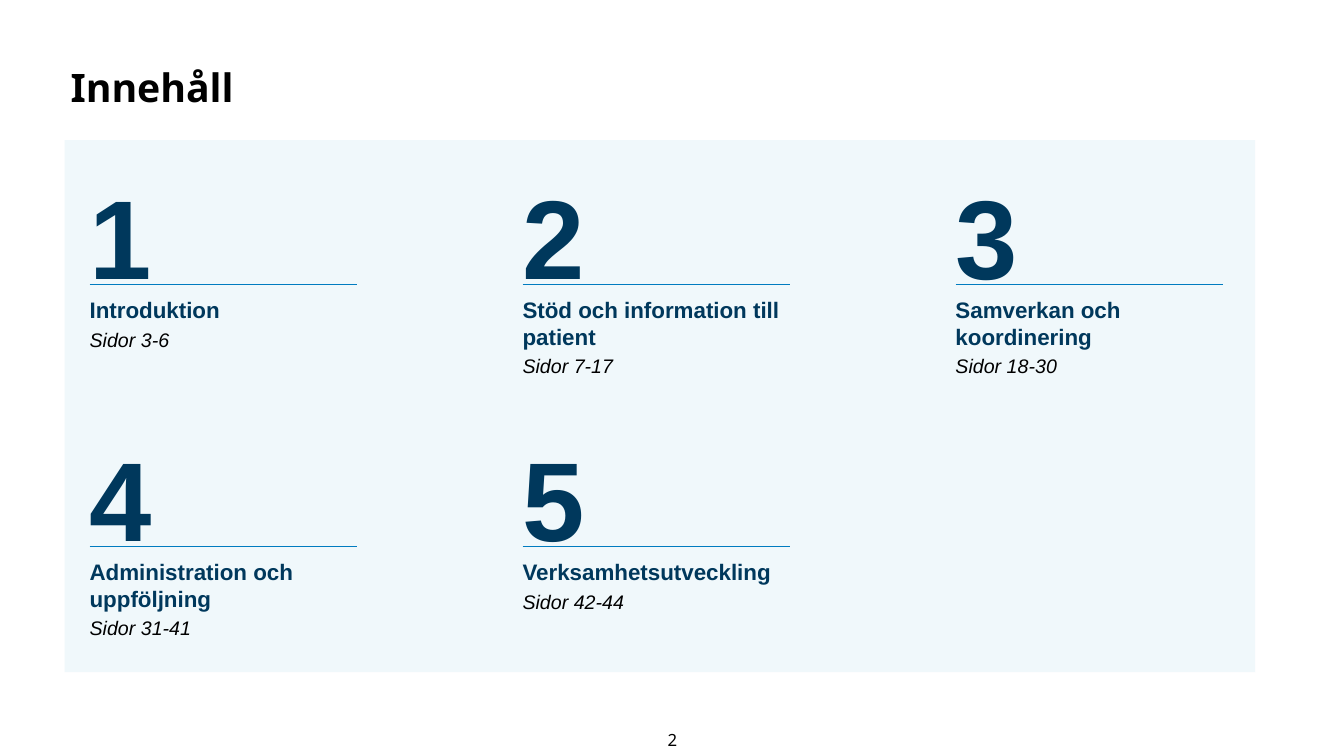
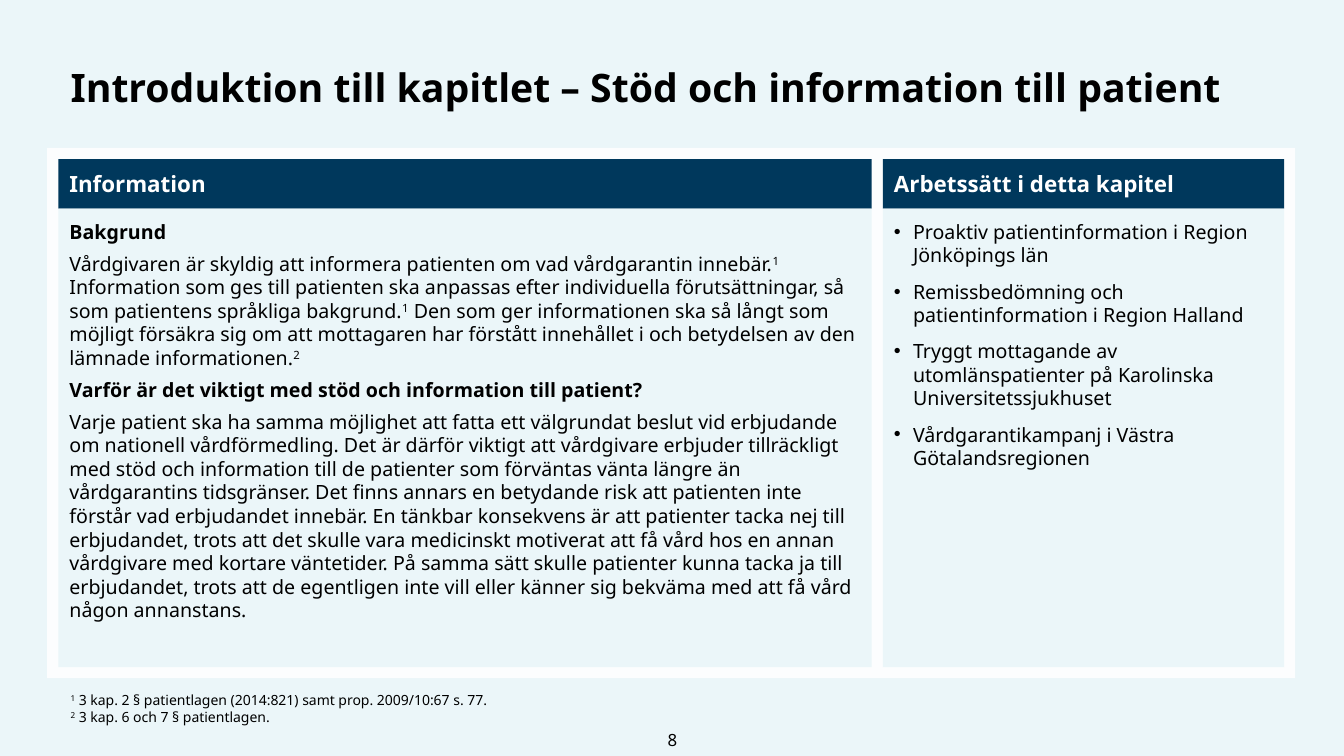
from lxml.etree import SubElement as Sub
from pptx import Presentation
from pptx.dml.color import RGBColor as Rgb
from pptx.enum.shapes import MSO_CONNECTOR as Link, MSO_SHAPE as Form
from pptx.enum.text import MSO_ANCHOR as Anchor, PP_ALIGN as Align
from pptx.oxml.ns import qn
from pptx.util import Cm, Pt

# Content
TOC = {
    "title": "Innehåll",
    "page": 2,
    "parts": [
        ("Introduktion", "Sidor 3-6"),
        ("Stöd och information till patient", "Sidor 7-17"),
        ("Samverkan och koordinering", "Sidor 18-30"),
        ("Administration och uppföljning", "Sidor 31-41"),
        ("Verksamhetsutveckling", "Sidor 42-44"),
    ],
}
# Each paragraph is (style, text); marks between ^ are raised
INTRO = {
    "title": "Introduktion till kapitlet – Stöd och information till patient",
    "page": 8,
    "cards": [
        ("Information", [
            ("strong", "Bakgrund"),
            ("body", "Vårdgivaren är skyldig att informera patienten om vad "
             "vårdgarantin innebär.^1^ Information som ges till patienten ska "
             "anpassas efter individuella förutsättningar, så som patientens "
             "språkliga bakgrund.^1^ Den som ger informationen ska så långt som "
             "möjligt försäkra sig om att mottagaren har förstått innehållet i "
             "och betydelsen av den lämnade informationen.^2^"),
            ("strong", "Varför är det viktigt med stöd och information till patient?"),
            ("body", "Varje patient ska ha samma möjlighet att fatta ett "
             "välgrundat beslut vid erbjudande om nationell vårdförmedling. Det "
             "är därför viktigt att vårdgivare erbjuder tillräckligt med stöd "
             "och information till de patienter som förväntas vänta längre än "
             "vårdgarantins tidsgränser. Det finns annars en betydande risk att "
             "patienten inte förstår vad erbjudandet innebär. En tänkbar "
             "konsekvens är att patienter tacka nej till erbjudandet, trots att "
             "det skulle vara medicinskt motiverat att få vård hos en annan "
             "vårdgivare med kortare väntetider. På samma sätt skulle patienter "
             "kunna tacka ja till erbjudandet, trots att de egentligen inte vill "
             "eller känner sig bekväma med att få vård någon annanstans."),
        ]),
        ("Arbetssätt i detta kapitel", [
            ("bullet", "Proaktiv patientinformation i Region Jönköpings län"),
            ("bullet", "Remissbedömning och patientinformation i Region Halland"),
            ("bullet", "Tryggt mottagande av utomlänspatienter på Karolinska "
             "Universitetssjukhuset"),
            ("bullet", "Vårdgarantikampanj i Västra Götalandsregionen"),
        ]),
    ],
    "notes": [
        ("note", "^1^ 3 kap. 2 § patientlagen (2014:821) samt prop. 2009/10:67 s. 77."),
        ("note", "^2^ 3 kap. 6 och 7 § patientlagen."),
    ],
}

# Shared look
COLORS = {"white": "FFFFFF", "black": "000000", "navy": "00385C",
          "blue": "017CC0", "ice": "DBEEF5", "pale": "EBF6F9"}
SANS, ARIAL = "Noto Sans", "Arial"
LEAD = 1.2  # line pitch as a share of the text size
# Style: font values, colour, space after, alignment
STYLES = {
    "title": ({"name": SANS, "size": 28, "bold": True}, "black", 0, Align.LEFT),
    "page": ({"name": SANS, "size": 12}, "black", 0, Align.CENTER),
    "digit": ({"name": ARIAL, "size": 80, "bold": True}, "navy", 3, Align.LEFT),
    "part": ({"name": ARIAL, "size": 16, "bold": True}, "navy", 3, Align.LEFT),
    "range": ({"name": ARIAL, "size": 14, "italic": True}, "black", 3, Align.LEFT),
    "head": ({"name": SANS, "size": 16, "bold": True}, "white", 0, Align.LEFT),
    "strong": ({"name": SANS, "size": 14, "bold": True}, "black", 6, Align.LEFT),
    "body": ({"name": SANS, "size": 14}, "black", 6, Align.LEFT),
    "bullet": ({"name": SANS, "size": 14}, "black", 9, Align.LEFT),
    "note": ({"name": SANS, "size": 10}, "black", 0, Align.LEFT),
}


def paint(fill, color):
    fill.solid()
    fill.fore_color.rgb = Rgb.from_string(COLORS[color])


def write(shape, paras, pads=(0, 0, 0, 0), anchor=Anchor.TOP):
    frame = shape.text_frame
    frame.word_wrap = True
    frame.vertical_anchor = anchor
    for side, pad in zip(("left", "top", "right", "bottom"), pads):
        setattr(frame, "margin_" + side, Cm(pad))
    for i, (style, text) in enumerate(paras):
        font, color, after, align = STYLES[style]
        para = frame.add_paragraph() if i else frame.paragraphs[0]
        if style == "bullet":
            props = para._p.get_or_add_pPr()
            props.set("marL", str(Cm(0.48)))
            props.set("indent", str(-Cm(0.48)))
            Sub(props, qn("a:buFont")).set("typeface", ARIAL)
            Sub(props, qn("a:buChar")).set("char", "•")
        para.alignment = align
        para.space_after = Pt(after)
        para.line_spacing = Pt(font["size"] * LEAD)
        for j, bit in enumerate(text.split("^")):
            if not bit:
                continue
            run = para.add_run()
            run.text = bit
            for key, value in font.items():
                setattr(run.font, key, Pt(value) if key == "size" else value)
            run.font.color.rgb = Rgb.from_string(COLORS[color])
            if j % 2:
                run._r.get_or_add_rPr().set("baseline", "30000")


def add_text(slide, box, paras, **layout):
    write(slide.shapes.add_textbox(*map(Cm, box)), paras, **layout)


def add_rect(slide, box, color, alpha=100):
    rect = slide.shapes.add_shape(Form.RECTANGLE, *map(Cm, box))
    rect.shadow.inherit = False
    rect.line.fill.background()
    paint(rect.fill, color)
    if alpha < 100:
        tint = rect._element.spPr.find(".//" + qn("a:srgbClr"))
        Sub(tint, qn("a:alpha")).set("val", str(alpha * 1000))
    return rect


def add_rule(slide, x, y, wide):
    rule = slide.shapes.add_connector(Link.STRAIGHT, Cm(x), Cm(y), Cm(x + wide), Cm(y))
    rule.line.width = Pt(0.5)
    paint(rule.line.fill, "blue")
    Sub(rule._element.spPr, qn("a:effectLst"))


def add_slide(deck, data, back):
    slide = deck.slides.add_slide(deck.slide_layouts[6])
    paint(slide.background.fill, back)
    add_text(slide, (1.78, 1.6, 30.33, 1.8), [("title", data["title"])])
    add_text(slide, (15.65, 18.31, 2.59, 0.69), [("page", str(data["page"]))],
             anchor=Anchor.MIDDLE)
    return slide


def build_toc(deck):
    slide = add_slide(deck, TOC, "white")
    add_rect(slide, (1.63, 3.53, 30, 13.41), "ice", 40)
    # Grid of three columns
    wide = 6.74
    for i, (name, pages) in enumerate(TOC["parts"]):
        row, col = divmod(i, 3)
        x, y = 2.26 + 10.91 * col, 4.22 + 6.6 * row
        add_text(slide, (x, y, 3.48, 3.53), [("digit", str(i + 1))])
        add_rule(slide, x, y + 2.95, wide)
        add_text(slide, (x, y + 3.25, wide, 2.26), [("part", name), ("range", pages)])


def build_intro(deck):
    slide = add_slide(deck, INTRO, "pale")
    left, top, wide, high, gap, pad = 1.19, 3.73, 31.45, 13.36, 0.28, 0.28
    add_rect(slide, (left, top, wide, high), "white", 86)
    # Cards: a navy head over a pale body
    x, y, head = left + gap, top + gap, 1.25
    for (name, paras), width in zip(INTRO["cards"], (20.5, 10.11)):
        bar = add_rect(slide, (x, y, width, head), "navy")
        write(bar, [("head", name)], (pad, 0, pad, 0), Anchor.MIDDLE)
        body = add_rect(slide, (x, y + head, width, high - 2 * gap - head), "pale")
        write(body, paras, (pad, pad, pad, 0))
        x += width + gap
    add_text(slide, (1.78, 17.3, 23.55, 0.94), INTRO["notes"], pads=(0, 0.13, 0.25, 0.13))


def main():
    deck = Presentation()
    deck.slide_width, deck.slide_height = Cm(33.87), Cm(19.05)
    build_toc(deck)
    build_intro(deck)
    deck.save("out.pptx")


if __name__ == "__main__":
    main()
